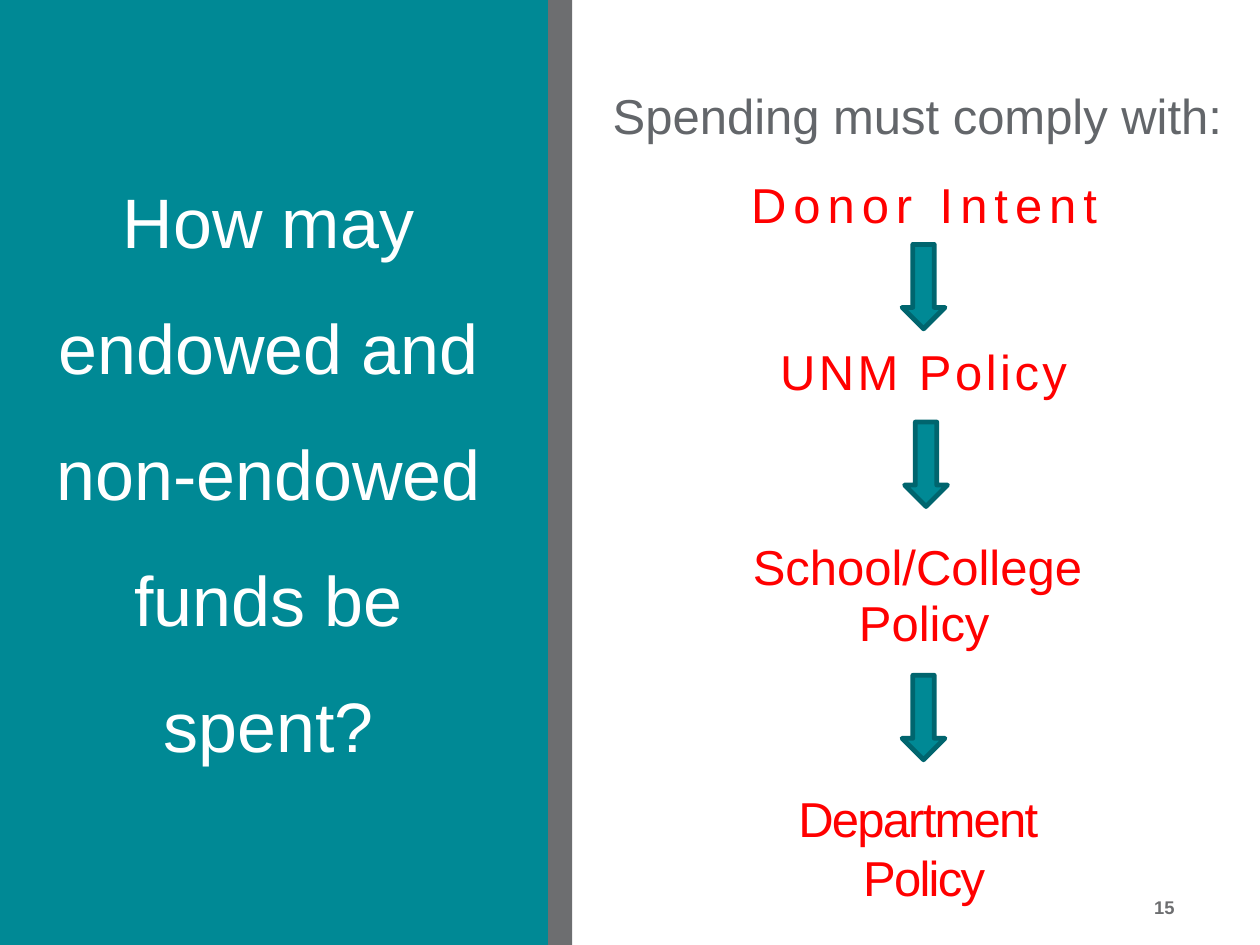
"""Build the slide on how endowed and non-endowed funds may be spent."""
import pptx
import pptx.dml.color
import pptx.enum.shapes
import pptx.enum.text
import pptx.util

Inches = pptx.util.Inches
Pt = pptx.util.Pt
ALIGN = pptx.enum.text.PP_ALIGN
ANCHOR = pptx.enum.text.MSO_ANCHOR
SHAPE = pptx.enum.shapes.MSO_SHAPE
TEAL, GRAY, RED = "008995", "6D6E70", "FF0000"


def rgb(color):
    """Turn a hex string into a colour."""
    return pptx.dml.color.RGBColor.from_string(color)


def write(sp, text, size=28, color=RED, bold=False, align=ALIGN.CENTER,
          anchor=ANCHOR.TOP, line=0.94, after=2, tracking=0):
    """Fill a shape with one formatted paragraph per line of text."""
    tf = sp.text_frame
    tf.word_wrap = True
    tf.auto_size = pptx.enum.text.MSO_AUTO_SIZE.NONE
    tf.vertical_anchor = anchor
    for i, words in enumerate(text.split("\n")):
        p = tf.add_paragraph() if i else tf.paragraphs[0]
        p.alignment = align
        p.line_spacing = line
        p.space_before = Pt(0)
        p.space_after = Pt(after)
        r = p.add_run()
        r.text = words
        r.font.name = "Arial"
        r.font.size = Pt(size)
        r.font.bold = bold
        r.font.color.rgb = rgb(color)
        if tracking:
            r.font._element.set("spc", str(tracking * 100))


prs = pptx.Presentation()
prs.slide_width = Inches(10)
prs.slide_height = Inches(7.5)
s = prs.slides.add_slide(prs.slide_layouts[5])

for left, width, color in [(0, 4.35, TEAL), (4.35, 0.19, GRAY)]:
    sp = s.shapes.add_shape(SHAPE.RECTANGLE, Inches(left), 0, Inches(width), prs.slide_height)
    sp.shadow.inherit = False
    sp.fill.solid()
    sp.fill.fore_color.rgb = rgb(color)
    sp.line.fill.background()

title = s.shapes.title
sp._element.addnext(title._element)
title.left, title.top = Inches(0.24), Inches(1.13)
title.width, title.height = Inches(3.78), Inches(4.91)
write(title, "How may endowed and non-endowed funds be spent?", size=40,
      color="FFFFFF", anchor=ANCHOR.MIDDLE, line=1.5, after=0)

boxes = [
    (4.72, 0.67, 5.12, 0.54, "Spending must comply with:", {"color": "63666A"}),
    (4.72, 1.37, 5.23, 0.54, "Donor Intent", {"tracking": 4}),
    (4.72, 2.7, 5.22, 0.54, "UNM Policy", {"tracking": 2}),
    (4.72, 4.25, 5.23, 0.99, "School/College \nPolicy", {"after": 0}),
    (4.92, 6.25, 4.83, 1.01, "Department \nPolicy", {"tracking": -1}),
    (8.11, 7.06, 1.31, 0.44, "15",
     {"size": 10.5, "color": GRAY, "bold": True, "align": ALIGN.RIGHT, "line": 1, "after": 0}),
]
for left, top, width, height, text, style in boxes:
    sp = s.shapes.add_textbox(Inches(left), Inches(top), Inches(width), Inches(height))
    write(sp, text, **style)

for left, top in [(7.16, 1.94), (7.18, 3.35), (7.16, 5.36)]:
    sp = s.shapes.add_shape(SHAPE.DOWN_ARROW, Inches(left), Inches(top), Inches(0.34), Inches(0.67))
    sp.shadow.inherit = False
    sp.fill.solid()
    sp.fill.fore_color.rgb = rgb(TEAL)
    sp.line.color.rgb = rgb("00656E")
    sp.line.width = Pt(2.75)

prs.save("out.pptx")
